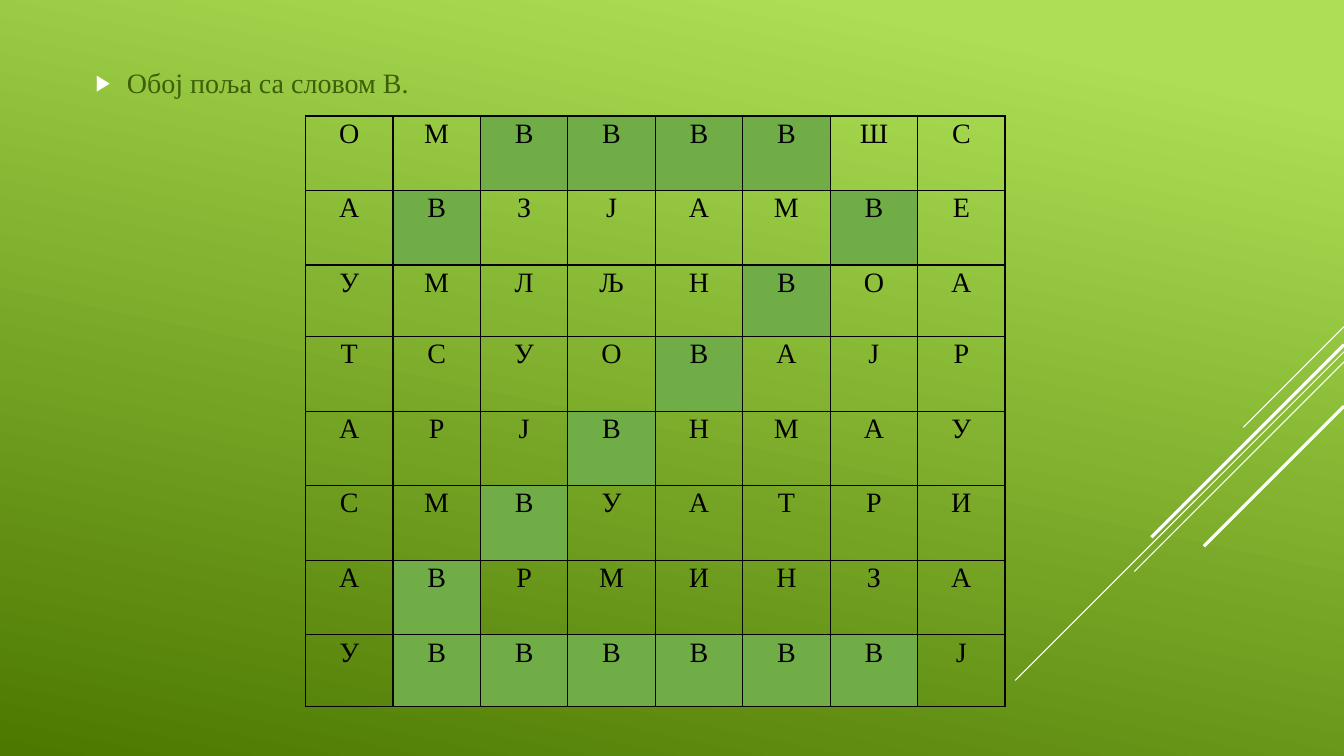
from lxml.etree import SubElement
from pptx import Presentation
from pptx.dml.color import RGBColor
from pptx.enum.shapes import MSO_CONNECTOR
from pptx.enum.text import MSO_ANCHOR, PP_ALIGN
from pptx.oxml.ns import qn
from pptx.util import Inches, Pt

COLORS = {
    "light": "ACDF55",
    "dark": "4C7800",
    "white": "FFFFFF",
    "task": "3E5E08",
    "black": "000000",
    "marked": "70AD47",
}
PAGE_WIDTH, PAGE_HEIGHT = 13.33, 7.5
MARKED_LETTER = "В"
LETTER_ROWS = [
    "ОМВВВВШС",
    "АВЗЈАМВЕ",
    "УМЛЉНВОА",
    "ТСУОВАЈР",
    "АРЈВНМАУ",
    "СМВУАТРИ",
    "АВРМИНЗА",
    "УВВВВВВЈ",
]
ROW_HEIGHTS = [0.74, 0.74, 0.71, 0.74, 0.74, 0.74, 0.74, 0.71]
# Top at the right edge, length along each axis, line width in points
RAYS = [
    (3.24, 1, 0.75),
    (3.49, 3.26, 0.75),
    (3.59, 2.08, 0.75),
    (3.42, 1.91, 2.25),
    (4.03, 1.39, 2.25),
]


def rgb(name):
    return RGBColor.from_string(COLORS[name])


def write(para, text, size=20, color="black", font="Times New Roman"):
    span = para.add_run()
    span.text = text
    span.font.size = Pt(size)
    span.font.name = font
    span.font.color.rgb = rgb(color)


def paint_background(page):
    fill = page.background.fill
    fill.gradient()
    fill.gradient_angle = 360 - 102
    for stop, name, position in zip(fill.gradient_stops, ("light", "dark"), (0.1, 1)):
        stop.color.rgb = rgb(name)
        stop.position = position


def draw_rays(page, right):
    """Draw the diagonal lines that run down and left from the right edge."""
    for top, reach, width in RAYS:
        ray = page.shapes.add_connector(
            MSO_CONNECTOR.STRAIGHT, Inches(right), Inches(top),
            Inches(right - reach), Inches(top + reach))
        ray.line.color.rgb = rgb("white")
        ray.line.width = Pt(width)
        SubElement(ray._element.spPr, qn("a:effectLst"))


def add_bullet(para, indent):
    props = para._p.get_or_add_pPr()
    props.set("marL", str(Inches(indent)))
    props.set("indent", str(-Inches(indent)))
    color = SubElement(props, qn("a:buClr"))
    SubElement(color, qn("a:srgbClr"), val=COLORS["white"])
    SubElement(props, qn("a:buSzPct"), val="80000")
    SubElement(props, qn("a:buFont"), typeface="Arial")
    SubElement(props, qn("a:buChar"), char="▶")


def add_task(page, left, top, width, height):
    box = page.shapes.add_textbox(
        Inches(left), Inches(top), Inches(width), Inches(height))
    frame = box.text_frame
    frame.word_wrap = True
    frame.vertical_anchor = MSO_ANCHOR.MIDDLE
    frame.margin_bottom = Inches(0.43)
    para = frame.paragraphs[0]
    add_bullet(para, 0.31)
    write(para, "Обој поља са словом В.", color="task")


def add_borders(cell):
    props = cell._tc.get_or_add_tcPr()
    for side in ("lnL", "lnR", "lnT", "lnB"):
        line = SubElement(props, qn(f"a:{side}"), w=str(Pt(1)))
        fill = SubElement(line, qn("a:solidFill"))
        SubElement(fill, qn("a:srgbClr"), val=COLORS["black"])


def fill_cell(cell, letter):
    add_borders(cell)
    if letter == MARKED_LETTER:
        cell.fill.solid()
        cell.fill.fore_color.rgb = rgb("marked")
    else:
        cell.fill.background()
    cell.margin_left = cell.margin_right = Inches(0.07)
    cell.margin_top = cell.margin_bottom = 0
    para = cell.text_frame.paragraphs[0]
    para.alignment = PP_ALIGN.CENTER
    para.line_spacing = 1.07
    write(para, letter)


def add_letter_grid(page, left, top, width):
    columns = len(LETTER_ROWS[0])
    table = page.shapes.add_table(
        len(LETTER_ROWS), columns, Inches(left), Inches(top),
        Inches(width), Inches(sum(ROW_HEIGHTS))).table
    table.first_row = table.horz_banding = False
    for column in table.columns:
        column.width = Inches(width / columns)
    for row, height, letters in zip(table.rows, ROW_HEIGHTS, LETTER_ROWS):
        row.height = Inches(height)
        for cell, letter in zip(row.cells, letters):
            fill_cell(cell, letter)


def main():
    deck = Presentation()
    deck.slide_width = Inches(PAGE_WIDTH)
    deck.slide_height = Inches(PAGE_HEIGHT)
    page = deck.slides.add_slide(deck.slide_layouts[6])
    paint_background(page)
    draw_rays(page, PAGE_WIDTH)
    add_task(page, 0.85, 0.21, 9.33, 1.6)
    add_letter_grid(page, 3.03, 1.15, 6.94)
    deck.save("out.pptx")


if __name__ == "__main__":
    main()
